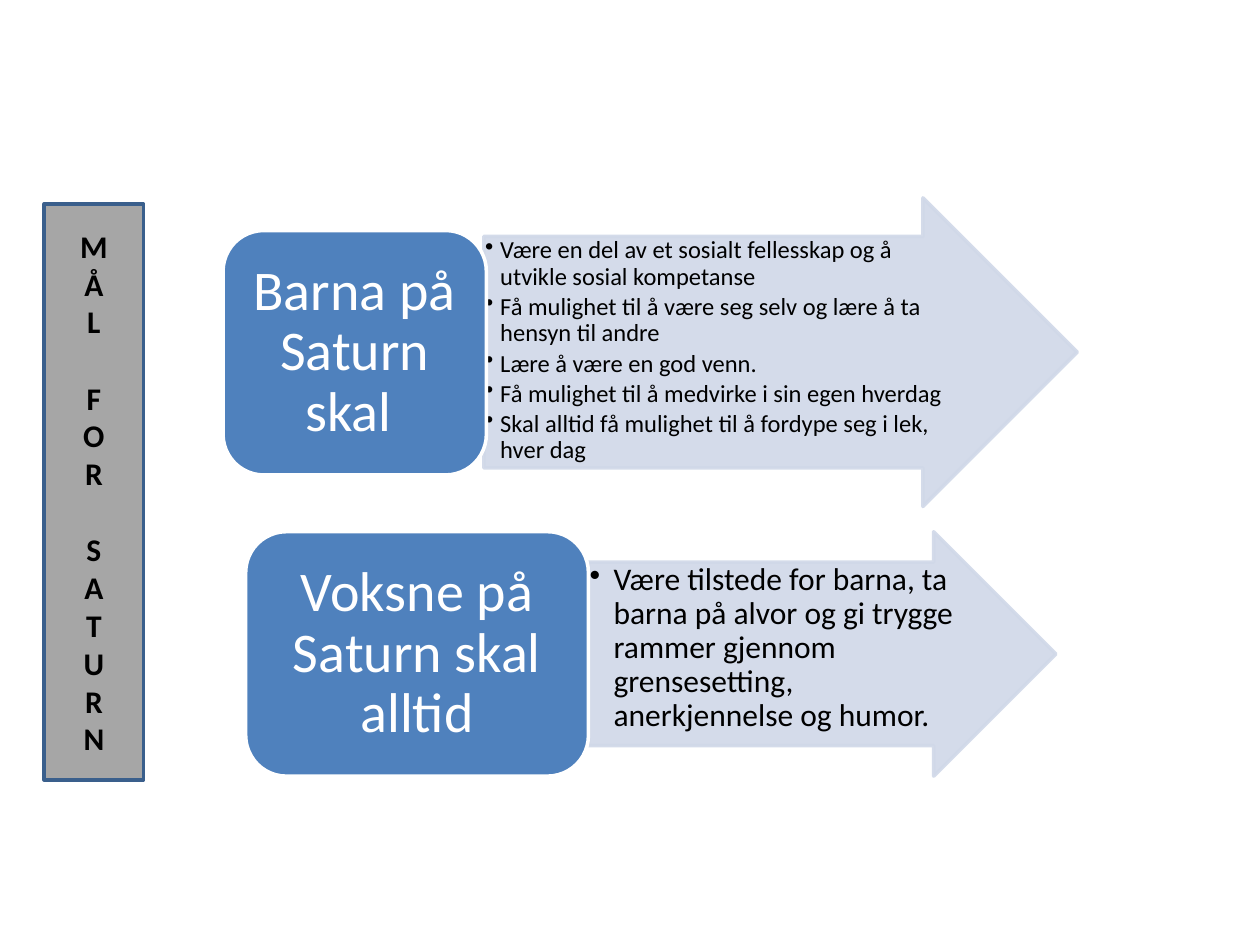
from lxml import etree
from pptx import Presentation
from pptx import util as u
from pptx.dml.color import RGBColor
from pptx.enum import shapes, text
from pptx.oxml.ns import qn

FONT = "Calibri"
BLACK = RGBColor(0x00, 0x00, 0x00)
WHITE = RGBColor(0xFF, 0xFF, 0xFF)
BLUE = RGBColor(0x4F, 0x81, 0xBD)
PALE = RGBColor(0xD0, 0xD8, 0xE8)
GREY = RGBColor(0xA6, 0xA6, 0xA6)
NAVY = RGBColor(0x3A, 0x5F, 0x8C)

SIDEBAR_WORDS = ["MÅL", "FOR", "SATURN"]
SIDEBAR_BOX = (0.35, 1.62, 0.79, 4.57)
LETTER_SIZE = 18

# Boxes are left, top, width, height in inches
GOALS = [
    {
        "label": "Barna på Saturn skal ",
        "label_box": (1.77, 1.83, 2.09, 1.94),
        "arrow_box": (3.84, 1.57, 4.71, 2.45),
        "size": 14,
        "indent": 0.12,
        "points": [
            "Være en del av et sosialt fellesskap og å utvikle sosial kompetanse",
            "Få mulighet til å være seg selv og lære å ta hensyn til andre",
            "Lære å være en god venn.",
            "Få mulighet til å medvirke i sin egen hverdag",
            "Skal alltid få mulighet til å fordype seg i lek, hver dag",
        ],
    },
    {
        "label": "Voksne på Saturn skal alltid",
        "label_box": (1.95, 4.22, 2.72, 1.94),
        "arrow_box": (4.67, 4.22, 3.71, 1.94),
        "size": 18,
        "indent": 0.19,
        "points": [
            "Være tilstede for barna, ta barna på alvor og gi trygge rammer "
            "gjennom grensesetting, anerkjennelse og humor.",
        ],
    },
]


def add_box(slide, kind, box, fill, line, margins, anchor):
    sp = slide.shapes.add_shape(kind, *(u.Inches(v) for v in box))
    sp.shadow.inherit = False
    sp.fill.solid()
    sp.fill.fore_color.rgb = fill
    sp.line.color.rgb = line
    sp.line.width = u.Pt(2)
    tf = sp.text_frame
    tf.word_wrap = True
    tf.vertical_anchor = anchor
    tf.margin_left = tf.margin_right = u.Inches(margins[0])
    tf.margin_top = tf.margin_bottom = u.Inches(margins[1])
    return sp


def add_paragraph(tf, index, content, size, color, align, bold=False):
    p = tf.add_paragraph() if index else tf.paragraphs[0]
    p.alignment = align
    r = p.add_run()
    r.text = content
    r.font.name = FONT
    r.font.size = u.Pt(size)
    r.font.bold = bold
    r.font.color.rgb = color
    return p


def set_bullet(p, indent):
    pPr = p._p.get_or_add_pPr()
    pPr.set("marL", str(u.Inches(indent)))
    pPr.set("indent", str(-u.Inches(indent)))
    etree.SubElement(pPr, qn("a:buChar")).set("char", "•")


def set_opacity(sp, percent):
    """Apply the opacity to both the fill and the line."""
    for clr in sp._element.spPr.iter(qn("a:srgbClr")):
        etree.SubElement(clr, qn("a:alpha")).set("val", str(percent * 1000))


def add_arrow(slide, goal):
    sp = add_box(slide, shapes.MSO_SHAPE.RIGHT_ARROW, goal["arrow_box"], PALE, PALE,
                 (0.01, 0.01), text.MSO_ANCHOR.TOP)
    sp.adjustments[0] = 0.75
    sp.adjustments[1] = 0.5
    set_opacity(sp, 90)
    for i, point in enumerate(goal["points"]):
        p = add_paragraph(sp.text_frame, i, point, goal["size"], BLACK, text.PP_ALIGN.LEFT)
        p.line_spacing = 0.9
        p.space_after = u.Pt(0.15 * goal["size"])
        set_bullet(p, goal["indent"])


def add_label(slide, goal):
    sp = add_box(slide, shapes.MSO_SHAPE.ROUNDED_RECTANGLE, goal["label_box"], BLUE, WHITE,
                 (0.13, 0.07), text.MSO_ANCHOR.MIDDLE)
    p = add_paragraph(sp.text_frame, 0, goal["label"], 32, WHITE, text.PP_ALIGN.CENTER)
    p.line_spacing = 0.9


def add_sidebar(slide):
    """Stack one letter per line, with a line's height between words."""
    sp = add_box(slide, shapes.MSO_SHAPE.RECTANGLE, SIDEBAR_BOX, GREY, NAVY,
                 (0.1, 0.05), text.MSO_ANCHOR.MIDDLE)
    index = 0
    for word in SIDEBAR_WORDS:
        for i, letter in enumerate(word):
            p = add_paragraph(sp.text_frame, index, letter, LETTER_SIZE, BLACK,
                              text.PP_ALIGN.CENTER, bold=True)
            if index and i == 0:
                p.space_before = u.Pt(1.22 * LETTER_SIZE)
            index += 1


def main():
    prs = Presentation()
    prs.slide_width, prs.slide_height = u.Inches(10), u.Inches(7.5)
    slide = prs.slides.add_slide(prs.slide_layouts[6])
    for goal in GOALS:
        add_arrow(slide, goal)
        add_label(slide, goal)
    add_sidebar(slide)
    prs.save("out.pptx")


if __name__ == "__main__":
    main()
